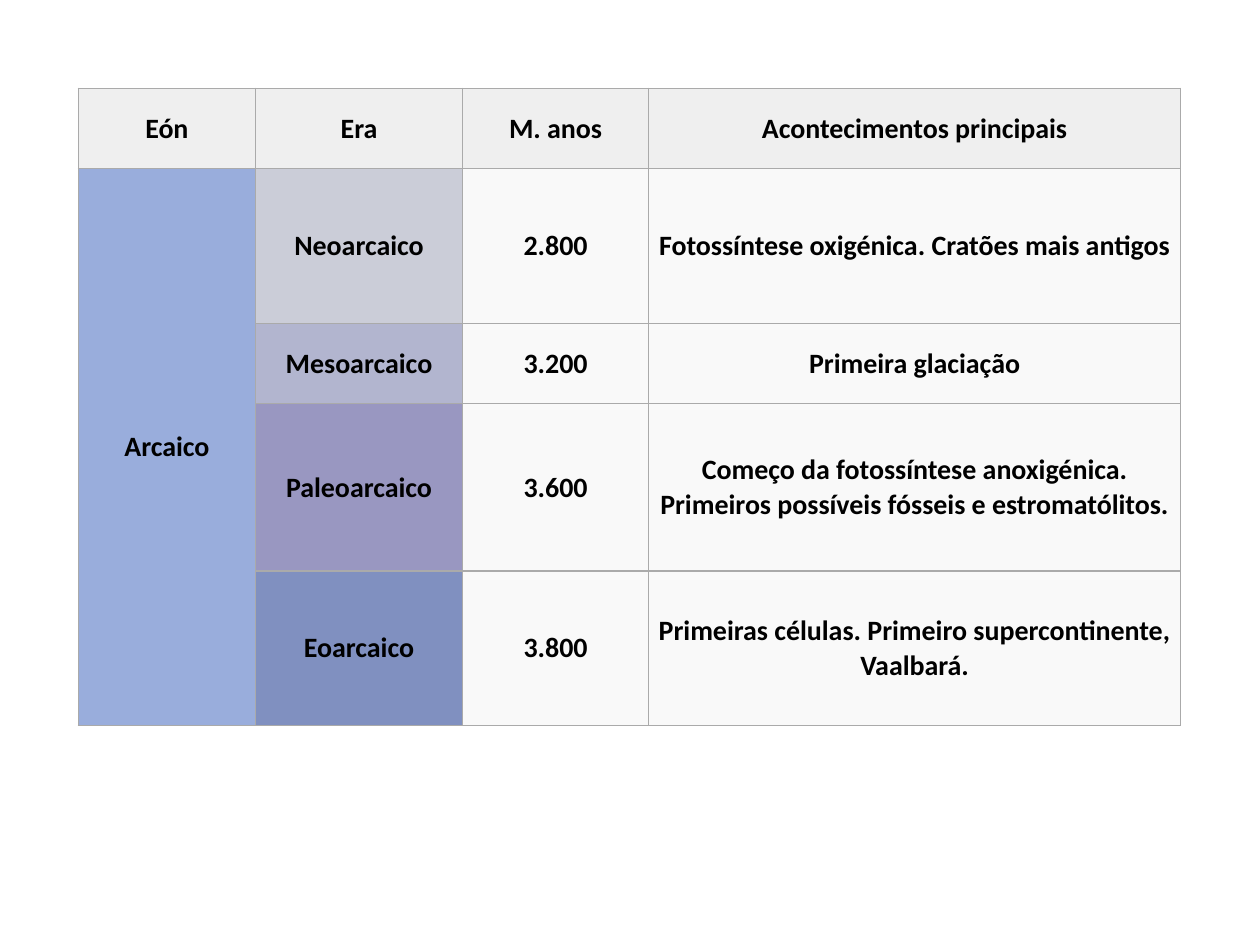
from lxml.etree import SubElement as Sub
from pptx import Presentation as Deck
from pptx.dml.color import RGBColor as RGB
from pptx.enum.text import MSO_ANCHOR as Anchor, PP_ALIGN as Align
from pptx.oxml.ns import qn
from pptx.util import Inches, Pt

BLACK = RGB(0x00, 0x00, 0x00)
HEAD = RGB(0xEF, 0xEF, 0xEF)
PALE = RGB(0xF9, 0xF9, 0xF9)
EON = RGB(0x99, 0xAD, 0xDC)
NEO = RGB(0xCB, 0xCD, 0xD8)
MESO = RGB(0xB2, 0xB5, 0xCF)
PALEO = RGB(0x99, 0x97, 0xC1)
EO = RGB(0x80, 0x90, 0xC0)
EDGE = RGB(0xAA, 0xAA, 0xAA)

COLS = [1.41, 1.64, 1.48, 4.22]
ROWS = [0.64, 1.23, 0.64, 1.33, 1.23]
TITLES = ["Eón", "Era", "M. anos", "Acontecimentos principais"]
ERAS = [
    ("Neoarcaico", NEO, "2.800", "Fotossíntese oxigénica. Cratões mais antigos"),
    ("Mesoarcaico", MESO, "3.200", "Primeira glaciação"),
    ("Paleoarcaico", PALEO, "3.600",
     "Começo da fotossíntese anoxigénica.\nPrimeiros possíveis fósseis e estromatólitos."),
    ("Eoarcaico", EO, "3.800",
     "Primeiras células. Primeiro supercontinente, Vaalbará."),
]


def frame(cell):
    props = cell._tc.get_or_add_tcPr()
    for spot, side in enumerate(("lnL", "lnR", "lnT", "lnB")):
        line = Sub(props, qn(f"a:{side}"), w=str(Pt(0.75)))
        fill = Sub(line, qn("a:solidFill"))
        Sub(fill, qn("a:srgbClr"), val=str(EDGE))
        props.insert(spot, line)


def style(cell, fill):
    cell.fill.solid()
    cell.fill.fore_color.rgb = fill
    cell.vertical_anchor = Anchor.MIDDLE
    cell.margin_left = cell.margin_right = Inches(0.02)
    cell.margin_top = cell.margin_bottom = Inches(0.02)
    frame(cell)


def write(cell, text):
    para = cell.text_frame.paragraphs[0]
    para.alignment = Align.CENTER
    for num, part in enumerate(text.split("\n")):
        if num:
            para.add_line_break()
        run = para.add_run()
        run.text = part
        font = run.font
        font.name, font.size, font.bold = "Calibri", Pt(16), True
        font.color.rgb = BLACK


def eon_table(slide, left, top, width, height):
    table = slide.shapes.add_table(
        len(ROWS), len(COLS), left, top, width, height).table
    table.horz_banding = False
    for col, size in zip(table.columns, COLS):
        col.width = int(width * size / sum(COLS))
    for row, size in zip(table.rows, ROWS):
        row.height = int(height * size / sum(ROWS))

    for col, title in enumerate(TITLES):
        style(table.cell(0, col), HEAD)
        write(table.cell(0, col), title)
    for row, (era, tint, age, event) in enumerate(ERAS, 1):
        style(table.cell(row, 0), EON)
        for col, (text, fill) in enumerate(
                [(era, tint), (age, PALE), (event, PALE)], 1):
            style(table.cell(row, col), fill)
            write(table.cell(row, col), text)
    table.cell(1, 0).merge(table.cell(len(ERAS), 0))
    write(table.cell(1, 0), "Arcaico")


def main():
    deck = Deck()
    deck.slide_width, deck.slide_height = Inches(10), Inches(7.5)
    slide = deck.slides.add_slide(deck.slide_layouts[6])
    eon_table(slide, Inches(0.62), Inches(0.7), Inches(8.75), Inches(5.06))
    deck.save("out.pptx")


if __name__ == "__main__":
    main()
